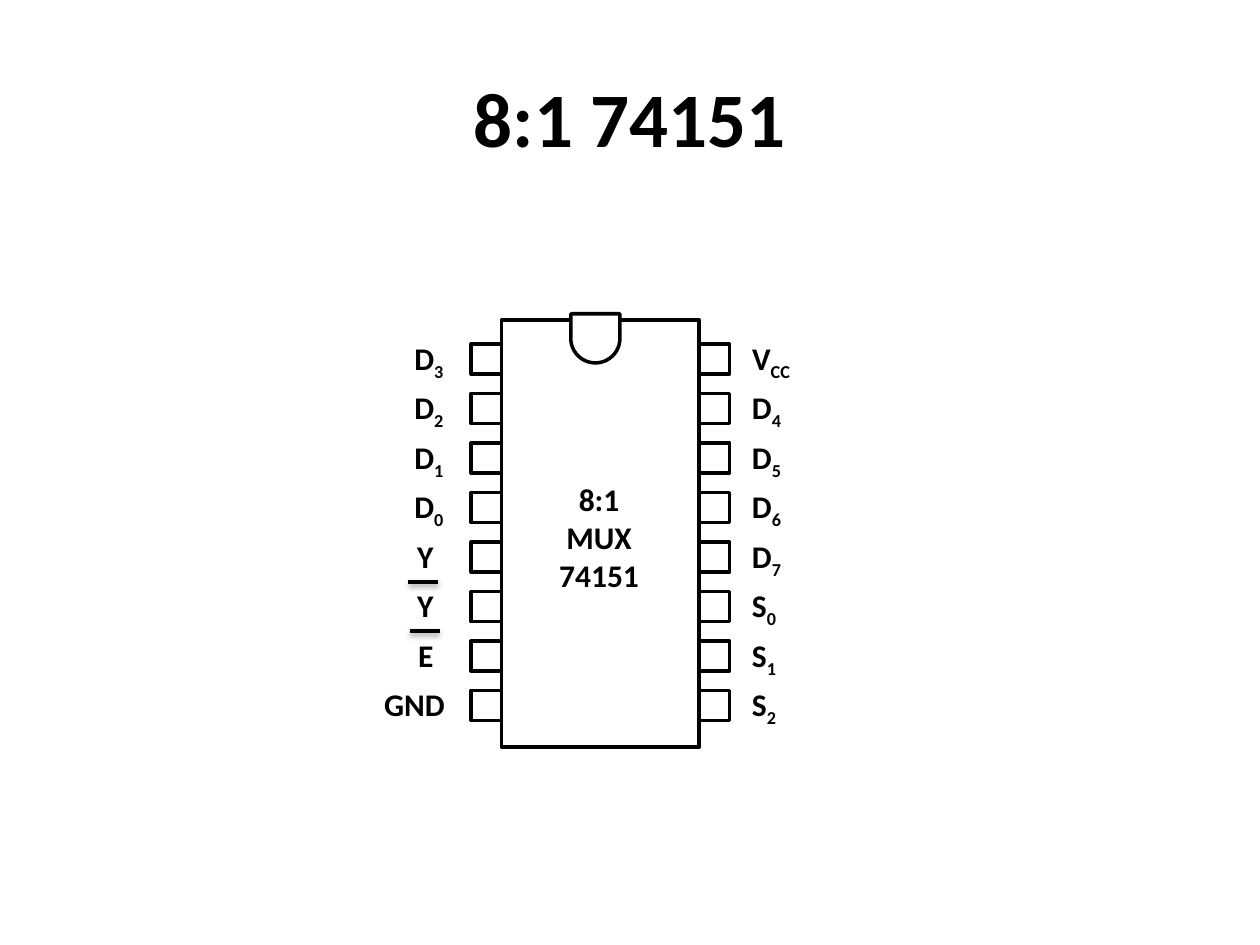
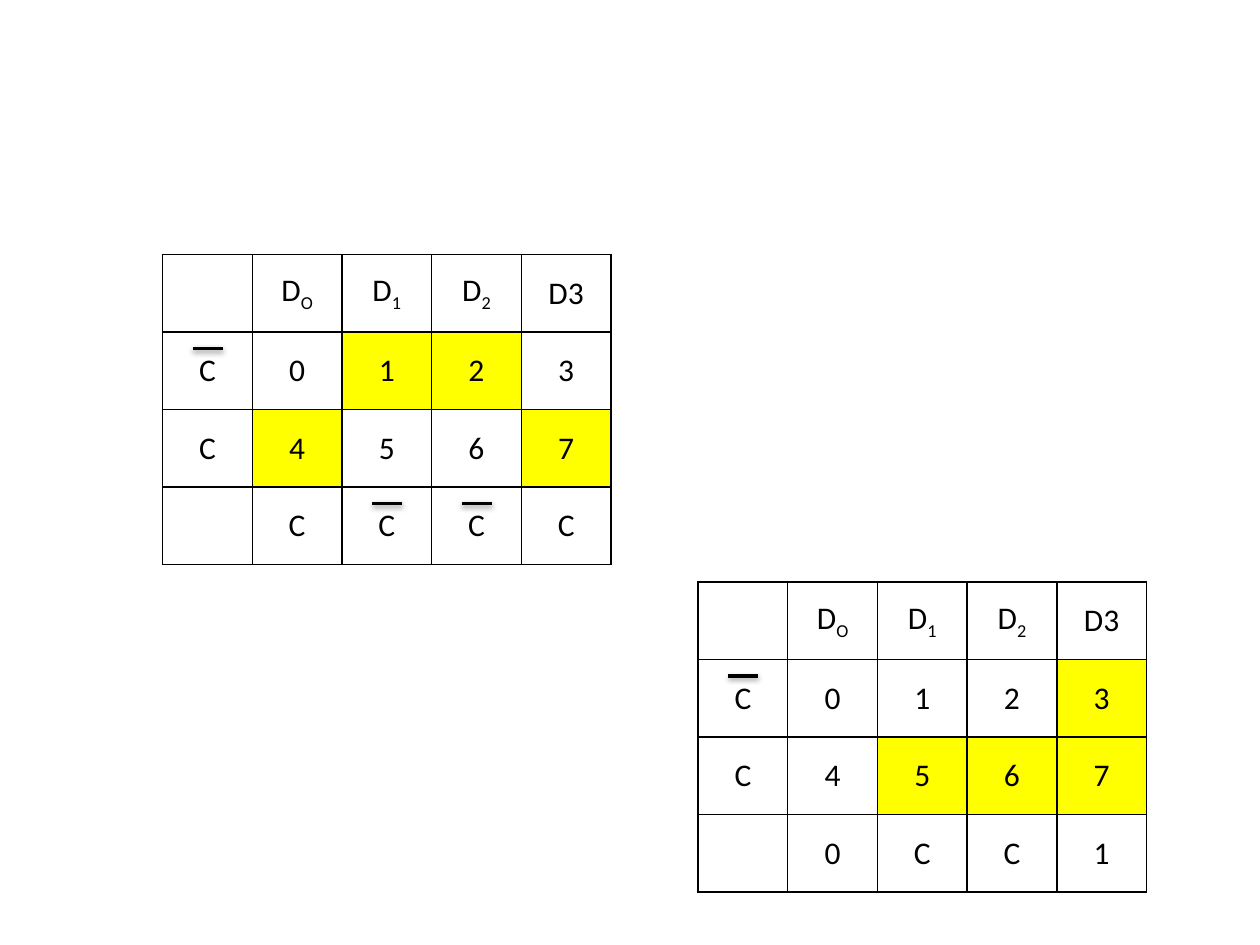
"""Build two slides about the 8:1 multiplexer: its pinout and its implementation tables."""
from lxml.etree import SubElement
from pptx import Presentation
from pptx.dml.color import RGBColor
from pptx.enum.shapes import MSO_CONNECTOR, MSO_SHAPE
from pptx.enum.text import MSO_ANCHOR, MSO_AUTO_SIZE, PP_ALIGN
from pptx.oxml import parse_xml
from pptx.oxml.ns import nsdecls, qn
from pptx.util import Inches, Pt

COLORS = {"ink": "000000", "paper": "FFFFFF", "mark": "FFFF00"}
FONT = "Calibri"
TITLE_ONLY, BLANK = 5, 6

PIN = 0.24
PIN_TOP = 2.73
PIN_PITCH = 2.75 / 7
LABEL_TOP = 2.64
CHIP_LEFT, CHIP_WIDTH = 3.98, 1.57
LEFT_PINS = [
    ("D_3", 3.19, 0.47, PP_ALIGN.LEFT), ("D_2", 3.19, 0.47, PP_ALIGN.LEFT),
    ("D_1", 3.19, 0.47, PP_ALIGN.LEFT), ("D_0", 3.19, 0.47, PP_ALIGN.LEFT),
    ("Y", 3.14, 0.47, PP_ALIGN.CENTER), ("Y", 3.14, 0.47, PP_ALIGN.CENTER),
    ("E", 3.22, 0.47, PP_ALIGN.LEFT), ("GND", 2.95, 0.71, PP_ALIGN.LEFT),
]
RIGHT_PINS = ["V_CC", "D_4", "D_5", "D_6", "D_7", "S_0", "S_1", "S_2"]

TABLE_WIDTH, TABLE_HEIGHT = 3.56, 2.46
TABLE_HEAD = [
    ["", "D_O", "D_1", "D_2", "D3"],
    ["C", "0", "1", "2", "3"],
    ["C", "4", "5", "6", "7"],
]


def color(name):
    return RGBColor.from_string(COLORS[name])


def write(tf, text, size=18, bold=False, align=PP_ALIGN.LEFT):
    """Write one paragraph per line; what follows an underscore is a subscript."""
    for i, line in enumerate(text.split("\n")):
        p = tf.add_paragraph() if i else tf.paragraphs[0]
        p.alignment = align
        for j, part in enumerate(line.split("_")):
            r = p.add_run()
            r.text = part
            r.font.name, r.font.size, r.font.bold = FONT, Pt(size), bold
            r.font.color.rgb = color("ink")
            if j:
                r.font._element.set("baseline", "-25000")


class Deck:
    """Hold the style and the current slide."""

    def __init__(self, prs):
        self.prs = prs
        self.s = None

    def slide(self, layout):
        self.s = self.prs.slides.add_slide(self.prs.slide_layouts[layout])

    def title(self, text):
        sp = self.s.shapes.title
        sp.left, sp.top = Inches(0.5), Inches(0.3)
        sp.width, sp.height = Inches(9), Inches(1.25)
        sp.text_frame.vertical_anchor = MSO_ANCHOR.MIDDLE
        write(sp.text_frame, text, size=44, bold=True, align=PP_ALIGN.CENTER)

    def shape(self, kind, x, y, w, h, rotation=0):
        sp = self.s.shapes.add_shape(kind, Inches(x), Inches(y), Inches(w), Inches(h))
        sp.rotation = rotation
        sp.shadow.inherit = False
        sp.fill.solid()
        sp.fill.fore_color.rgb = color("paper")
        sp.line.color.rgb = color("ink")
        sp.line.width = Pt(2)

    def label(self, text, x, y, w, h=0.4, align=PP_ALIGN.LEFT):
        sp = self.s.shapes.add_textbox(Inches(x), Inches(y), Inches(w), Inches(h))
        tf = sp.text_frame
        tf.word_wrap = True
        tf.auto_size = MSO_AUTO_SIZE.SHAPE_TO_FIT_TEXT
        write(tf, text, bold=True, align=align)

    def overbar(self, x, y, w=0.24):
        sp = self.s.shapes.add_connector(
            MSO_CONNECTOR.STRAIGHT, Inches(x), Inches(y), Inches(x + w), Inches(y))
        sp.line.color.rgb = color("ink")
        sp.line.width = Pt(2)
        effects = SubElement(sp._element.spPr, qn("a:effectLst"))
        shadow = SubElement(effects, qn("a:outerShdw"), blurRad=str(Pt(3.1)),
                            dist=str(Pt(1.6)), dir="5400000", rotWithShape="0")
        ink = SubElement(shadow, qn("a:srgbClr"), val=COLORS["ink"])
        SubElement(ink, qn("a:alpha"), val="38000")

    def cell(self, cell, text, fill):
        tcPr = cell._tc.get_or_add_tcPr()
        for side in ("lnL", "lnR", "lnT", "lnB"):
            tcPr.append(parse_xml(
                f'<a:{side} {nsdecls("a")} w="{Pt(1)}"><a:solidFill>'
                f'<a:srgbClr val="{COLORS["ink"]}"/></a:solidFill></a:{side}>'))
        cell.fill.solid()
        cell.fill.fore_color.rgb = color(fill)
        cell.vertical_anchor = MSO_ANCHOR.MIDDLE
        if text:
            write(cell.text_frame, text, align=PP_ALIGN.CENTER)

    def table(self, x, y, rows, marked, barred):
        n_rows, n_cols = len(rows), len(rows[0])
        col_w, row_h = TABLE_WIDTH / n_cols, TABLE_HEIGHT / n_rows
        table = self.s.shapes.add_table(
            n_rows, n_cols, Inches(x), Inches(y),
            Inches(TABLE_WIDTH), Inches(TABLE_HEIGHT)).table
        table.first_row = table.horz_banding = False
        for i, row in enumerate(rows):
            for j, text in enumerate(row):
                self.cell(table.cell(i, j), text, "mark" if text in marked else "paper")
        for i, j in barred:
            self.overbar(x + j * col_w + 0.24, y + i * row_h + 0.13)


def pinout(deck):
    deck.slide(TITLE_ONLY)
    deck.title("8:1 74151")
    deck.shape(MSO_SHAPE.RECTANGLE, CHIP_LEFT, 2.54, CHIP_WIDTH, 3.39)
    for x in (CHIP_LEFT - PIN, CHIP_LEFT + CHIP_WIDTH):
        for i in range(len(RIGHT_PINS)):
            deck.shape(MSO_SHAPE.RECTANGLE, x, PIN_TOP + i * PIN_PITCH, PIN, PIN)
    deck.shape(MSO_SHAPE.FLOWCHART_DELAY, 4.53, 2.49, 0.39, 0.39, rotation=90)
    for i, (text, x, w, align) in enumerate(LEFT_PINS):
        deck.label(text, x, LABEL_TOP + i * PIN_PITCH, w, align=align)
    for i, text in enumerate(RIGHT_PINS):
        deck.label(text, 5.87, LABEL_TOP + i * PIN_PITCH, 0.71 if text == "V_CC" else 0.47)
    deck.label("8:1\nMUX\n74151", 4.32, 3.76, 0.87, 1.01, align=PP_ALIGN.CENTER)
    deck.overbar(3.24, 4.62)
    deck.overbar(3.25, 5.01)


def implementation_tables(deck):
    deck.slide(BLANK)
    deck.table(1.29, 2.02, TABLE_HEAD + [["", "C", "C", "C", "C"]],
               marked={"1", "2", "4", "7"}, barred=[(1, 0), (3, 2), (3, 3)])
    deck.table(5.54, 4.62, TABLE_HEAD + [["", "0", "C", "C", "1"]],
               marked={"3", "5", "6", "7"}, barred=[(1, 0)])
    last_row = len(TABLE_HEAD)
    assert last_row == 3


def main():
    prs = Presentation()
    prs.slide_width, prs.slide_height = Inches(10), Inches(7.5)
    deck = Deck(prs)
    pinout(deck)
    implementation_tables(deck)
    prs.save("out.pptx")


if __name__ == "__main__":
    main()
